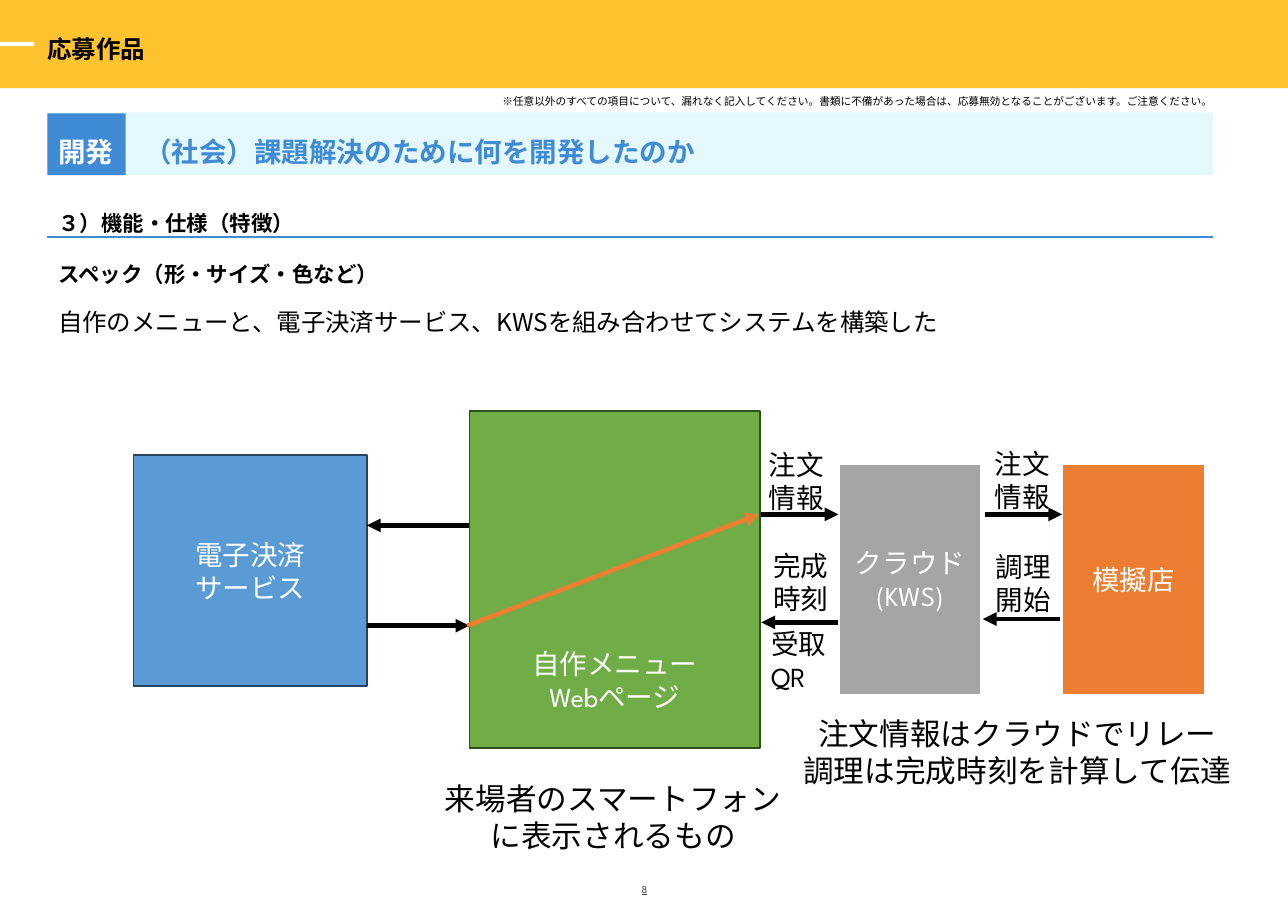
"""Build the slide that shows how the menu, payment, cloud and stall exchange data."""
from pptx import Presentation
from pptx import util as u
from pptx.dml.color import RGBColor
from pptx.enum import shapes, text
from pptx.oxml import parse_xml
from pptx.oxml.ns import nsdecls

PX = 9144
NOTO, SPARTAN = "Noto Sans CJK JP", "League Spartan"
BLACK, WHITE, ORANGE, BLUE = "000000", "FFFFFF", "ED7D31", "3F8BD6"
LEFT, CENTER, RIGHT = text.PP_ALIGN.LEFT, text.PP_ALIGN.CENTER, text.PP_ALIGN.RIGHT
TOP, MIDDLE, BOTTOM = text.MSO_ANCHOR.TOP, text.MSO_ANCHOR.MIDDLE, text.MSO_ANCHOR.BOTTOM
INSETS, TIGHT = (10, 5, 10, 5), (0, 1, 0, 0)

TITLE = ("応募作品", (43, 30, 352, 28))
BANDS = [((0, 0, 1169, 80), "FFC32F"), ((0, 38, 31, 4), WHITE)]
HEADING_BAR = ((43, 102, 1058, 57), "E4F8FE")
HEADING_TAG = ("開発", (43, 103, 71, 56), BLUE)

HEADINGS = [
    ("（社会）課題解決のために何を開発したのか", (121, 103, 712, 56),
     dict(size=18, color=BLUE, bold=True, spacing=1.5)),
    ("３）機能・仕様（特徴）", (43, 174, 1058, 45), dict(size=14, bold=True, spacing=1.5)),
    ("スペック（形・サイズ・色など）", (43, 232, 1065, 34), dict(size=14, bold=True)),
    ("自作のメニューと、電子決済サービス、KWSを組み合わせてシステムを構築した",
     (43, 261, 1058, 50), dict(size=16, spacing=1.5)),
    ("※任意以外のすべての項目について、漏れなく記入してください。"
     "書類に不備があった場合は、応募無効となることがございます。ご注意ください。",
     (266, 85, 834, 13), dict(size=7, align=RIGHT, insets=TIGHT)),
]

SYSTEMS = [
    ("自作メニュー\nWebページ", (426, 373, 264, 306), "70AD47", ("314C1F", 1),
     dict(anchor=BOTTOM, insets=(10, 5, 10, 32))),
    ("電子決済\nサービス", (121, 413, 212, 210), "5B9BD5", ("28445D", 1), {}),
    ("クラウド\n(KWS)", (761, 421, 130, 210), "A5A5A5", (WHITE, 1.5), {}),
    ("模擬店", (964, 421, 130, 210), ORANGE, (WHITE, 1.5), {}),
]

ARROWS = [
    ((426, 477), (333, 477), BLACK),
    ((333, 568), (426, 568), BLACK),
    ((691, 467), (761, 467), BLACK),
    ((761, 565), (691, 565), BLACK),
    ((894, 467), (964, 467), BLACK),
    ((962, 562), (892, 562), BLACK),
    ((424, 568), (689, 467), ORANGE),
]

FLOW_LABELS = [
    ("注文\n情報", (688, 402, 71, 71)),
    ("注文\n情報", (893, 401, 71, 71)),
    ("調理\n開始", (894, 494, 78, 71)),
    ("完成\n時刻", (692, 493, 71, 71)),
    ("受取\nQR", (690, 564, 71, 71)),
]

CAPTIONS = [
    ("来場者のスマートフォン\nに表示されるもの", (392, 703, 329, 77)),
    ("注文情報はクラウドでリレー\n調理は完成時刻を計算して伝達", (717, 644, 413, 77)),
]

PAGE_NUMBER = ("8", (435, 787, 300, 40))


def rgb(value):
    """Turn a hex string into a colour."""
    return RGBColor.from_string(value)


def emu(box):
    """Scale px lengths to EMU."""
    return [length * PX for length in box]


def write(shape, content, size=18, color=BLACK, font=NOTO, bold=False, underline=False,
          align=LEFT, anchor=TOP, spacing=1.0, insets=INSETS, wrap=True):
    """Fill a shape with formatted text, one paragraph per line."""
    frame = shape.text_frame
    frame.text = content
    frame.word_wrap = wrap
    frame.auto_size = text.MSO_AUTO_SIZE.NONE
    frame.vertical_anchor = anchor
    (frame.margin_left, frame.margin_top,
     frame.margin_right, frame.margin_bottom) = emu(insets)
    for paragraph in frame.paragraphs:
        paragraph.alignment = align
        paragraph.line_spacing = spacing
        paragraph.space_before = u.Pt(0)
        for run in paragraph.runs:
            run.font.name = font
            run.font.size = u.Pt(size)
            run.font.bold = bold
            run.font.underline = underline
            run.font.color.rgb = rgb(color)
            run.font._element.append(
                parse_xml(f'<a:ea {nsdecls("a")} typeface="{NOTO}"/>'))


def add_text(slide, content, box, **style):
    """Add a text box."""
    write(slide.shapes.add_textbox(*emu(box)), content, **style)


def add_box(slide, box, fill, line=None):
    """Add a flat rectangle, outlined when a line is given."""
    shape = slide.shapes.add_shape(shapes.MSO_SHAPE.RECTANGLE, *emu(box))
    shape.shadow.inherit = False
    shape.fill.solid()
    shape.fill.fore_color.rgb = rgb(fill)
    if line:
        shape.line.color.rgb = rgb(line[0])
        shape.line.width = u.Pt(line[1])
    else:
        shape.line.fill.background()
    return shape


def add_line(slide, start, end, color, width, arrow=False):
    """Add a straight line, with an arrowhead at its end if wanted."""
    line = slide.shapes.add_connector(
        shapes.MSO_CONNECTOR.STRAIGHT, *emu(start), *emu(end))
    line.line.color.rgb = rgb(color)
    line.line.width = u.Pt(width)
    if arrow:
        line.line._get_or_add_ln().append(
            parse_xml(f'<a:tailEnd {nsdecls("a")} type="triangle"/>'))
    line._element.spPr.append(parse_xml(f'<a:effectLst {nsdecls("a")}/>'))


def main():
    """Build and save the presentation."""
    presentation = Presentation()
    presentation.slide_width, presentation.slide_height = emu((1169, 827))
    slide = presentation.slides.add_slide(presentation.slide_layouts[5])

    for box, fill in BANDS:
        add_box(slide, box, fill)
    title = slide.shapes.title
    slide.shapes._spTree.append(title._element)
    content, box = TITLE
    title.left, title.top, title.width, title.height = emu(box)
    write(title, content, size=16, bold=True, insets=TIGHT)

    add_box(slide, *HEADING_BAR)
    content, box, fill = HEADING_TAG
    write(add_box(slide, box, fill), content, color=WHITE, bold=True, spacing=1.5, wrap=False)
    for content, box, style in HEADINGS:
        add_text(slide, content, box, **style)
    add_line(slide, (43, 215), (1101, 215), "408AD6", 1)

    for content, box, fill, line, style in SYSTEMS:
        layout = dict(anchor=MIDDLE) | style
        write(add_box(slide, box, fill, line), content,
              color=WHITE, font=SPARTAN, align=CENTER, **layout)
    for start, end, color in ARROWS:
        add_line(slide, start, end, color, 3, arrow=True)
    for content, box in FLOW_LABELS:
        add_text(slide, content, box, font=SPARTAN, wrap=False)
    for content, box in CAPTIONS:
        add_text(slide, content, box, size=20, font=SPARTAN, align=CENTER, wrap=False)
    add_text(slide, *PAGE_NUMBER, size=7, color="404040", font=SPARTAN,
             underline=True, align=CENTER, anchor=MIDDLE)

    presentation.save("out.pptx")


if __name__ == "__main__":
    main()
